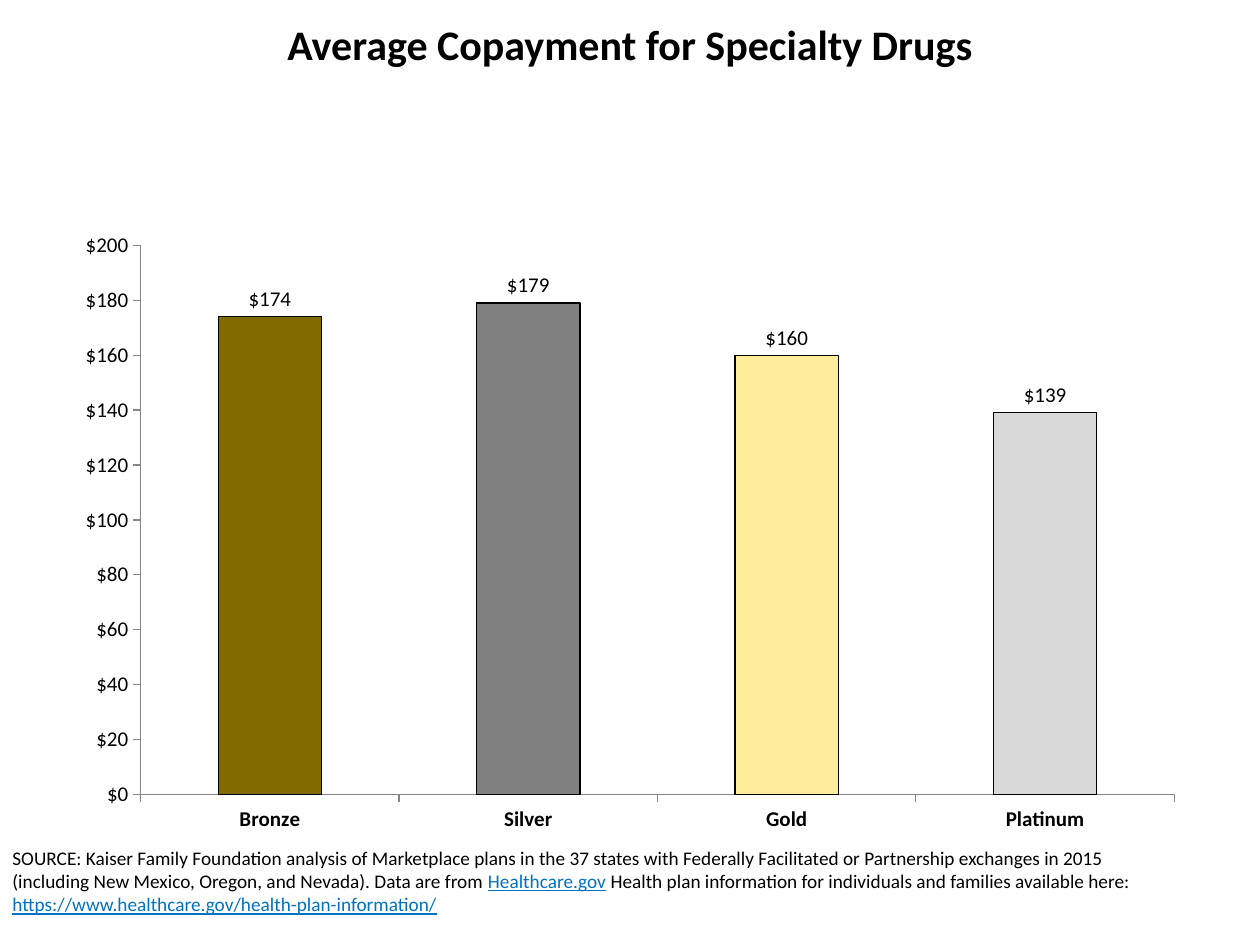
from dataclasses import dataclass

from pptx import Presentation
from pptx.chart.data import CategoryChartData
from pptx.dml.color import RGBColor
from pptx.enum.chart import XL_CHART_TYPE, XL_LABEL_POSITION, XL_TICK_MARK
from pptx.enum.text import MSO_ANCHOR, PP_ALIGN
from pptx.util import Pt

COLUMNS = XL_CHART_TYPE.COLUMN_CLUSTERED
LABEL_ABOVE = XL_LABEL_POSITION.OUTSIDE_END
TICK_OUT, TICK_NONE = XL_TICK_MARK.OUTSIDE, XL_TICK_MARK.NONE
TOP = MSO_ANCHOR.TOP
LEFT, CENTER = PP_ALIGN.LEFT, PP_ALIGN.CENTER


@dataclass(frozen=True)
class Theme:
    font: str = "Calibri"
    title_size: int = 24
    chart_size: int = 12
    source_size: int = 11
    text: RGBColor = RGBColor(0x00, 0x00, 0x00)
    link: RGBColor = RGBColor(0x00, 0x72, 0xC0)
    axis: RGBColor = RGBColor(0x86, 0x86, 0x86)
    bronze: RGBColor = RGBColor(0x82, 0x6A, 0x00)
    silver: RGBColor = RGBColor(0x80, 0x80, 0x80)
    gold: RGBColor = RGBColor(0xFF, 0xED, 0x9B)
    platinum: RGBColor = RGBColor(0xD9, 0xD9, 0xD9)


THEME = Theme()
DOLLARS = '"$"#,##0'

# Metal tier, average copayment, column colour
COPAYMENTS = [
    ("Bronze", 174, THEME.bronze),
    ("Silver", 179, THEME.silver),
    ("Gold", 160, THEME.gold),
    ("Platinum", 139, THEME.platinum),
]

# Source note: text, whether it is styled as a link
SOURCE_NOTE = [
    ("SOURCE: Kaiser Family Foundation analysis of Marketplace plans in the 37 states "
     "with Federally Facilitated or Partnership exchanges in 2015 (including New Mexico, "
     "Oregon, and Nevada). Data are from ", False),
    ("Healthcare.gov", True),
    (" Health plan information for individuals and families available here: ", False),
    ("https://www.healthcare.gov/health-plan-information/", True),
]


def style_font(font, size, bold=False):
    font.name = THEME.font
    font.size = Pt(size)
    font.bold = bold
    font.color.rgb = THEME.text


def add_text(slide, left, top, width, height, parts, size, bold=False, align=LEFT):
    box = slide.shapes.add_textbox(Pt(left), Pt(top), Pt(width), Pt(height))
    frame = box.text_frame
    frame.word_wrap = True
    frame.vertical_anchor = TOP
    paragraph = frame.paragraphs[0]
    paragraph.alignment = align
    style_font(paragraph.font, size, bold)
    for text, is_link in parts:
        run = paragraph.add_run()
        run.text = text
        if is_link:
            run.font.color.rgb = THEME.link
            run.font.underline = True


def style_axis(axis, bold=False):
    axis.has_major_gridlines = False
    axis.major_tick_mark = TICK_OUT
    axis.minor_tick_mark = TICK_NONE
    axis.format.line.color.rgb = THEME.axis
    axis.format.line.width = Pt(0.75)
    style_font(axis.tick_labels.font, THEME.chart_size, bold)


def add_copayment_chart(slide, left, top, width, height):
    data = CategoryChartData(number_format=DOLLARS)
    data.categories = [tier for tier, _, _ in COPAYMENTS]
    data.add_series("Series 1", [amount for _, amount, _ in COPAYMENTS])
    chart = slide.shapes.add_chart(
        COLUMNS, Pt(left), Pt(top), Pt(width), Pt(height), data).chart
    chart.has_title = False
    chart.has_legend = False
    style_font(chart.font, THEME.chart_size)

    # Axes
    style_axis(chart.category_axis, bold=True)
    style_axis(chart.value_axis)
    chart.value_axis.minimum_scale = 0
    chart.value_axis.maximum_scale = 200
    chart.value_axis.major_unit = 20
    chart.value_axis.tick_labels.number_format = DOLLARS
    chart.value_axis.tick_labels.number_format_is_linked = False

    # Columns, one colour per tier
    plot = chart.plots[0]
    plot.gap_width = 150
    plot.vary_by_categories = False
    copayments = plot.series[0]
    for index, (_, _, color) in enumerate(COPAYMENTS):
        column = copayments.points[index].format
        column.fill.solid()
        column.fill.fore_color.rgb = color
        column.line.color.rgb = THEME.text
        column.line.width = Pt(0.75)

    # Amounts above the columns
    amounts = copayments.data_labels
    amounts.show_value = True
    amounts.position = LABEL_ABOVE
    amounts.number_format = DOLLARS
    amounts.number_format_is_linked = False
    style_font(amounts.font, THEME.chart_size)


def main():
    presentation = Presentation()
    presentation.slide_width = Pt(720)
    presentation.slide_height = Pt(540)
    slide = presentation.slides.add_slide(presentation.slide_layouts[6])

    add_text(slide, 0, 480, 666, 60, SOURCE_NOTE, THEME.source_size)
    add_text(slide, 7.2, 7.2, 705.6, 72,
             [("Average Copayment for Specialty Drugs", False)],
             THEME.title_size, bold=True, align=CENTER)
    add_copayment_chart(slide, 36, 126, 648, 356.4)

    presentation.save("out.pptx")


if __name__ == "__main__":
    main()
